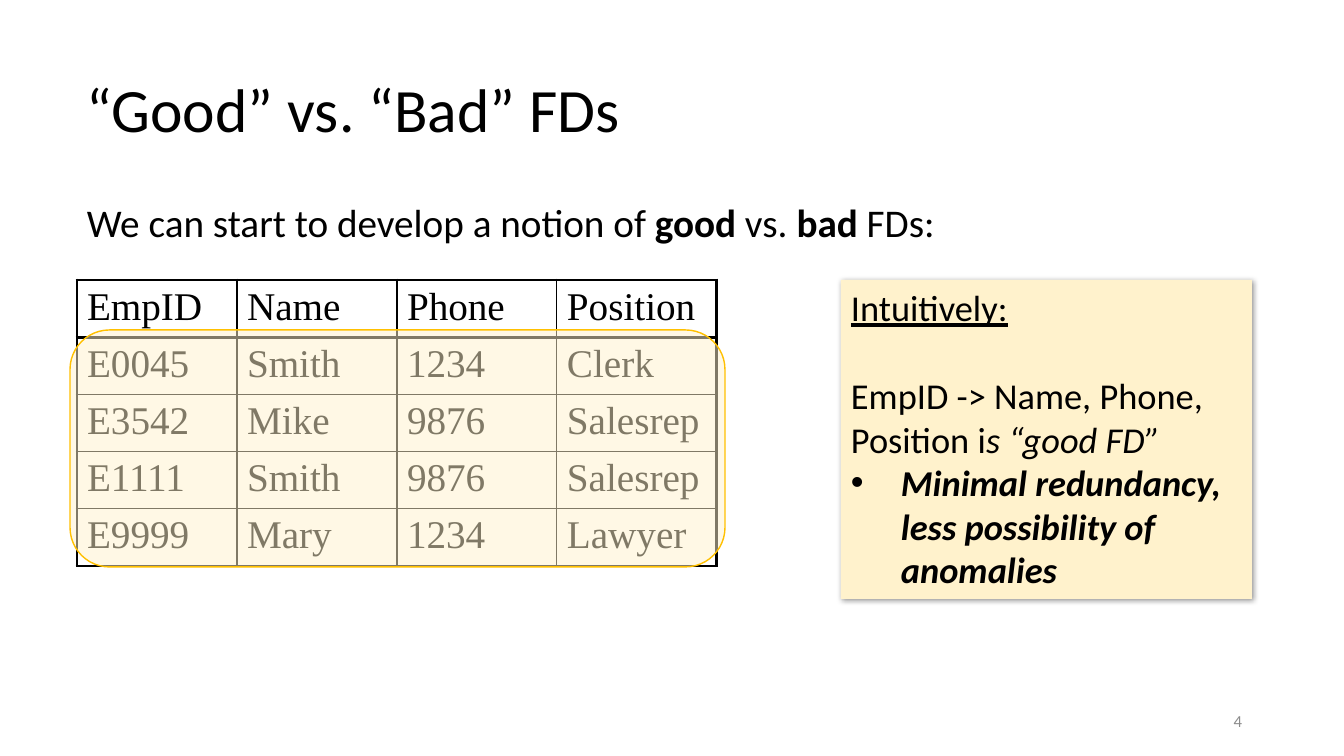
from lxml import etree
from pptx import Presentation
from pptx.dml.color import RGBColor
from pptx.enum.shapes import MSO_SHAPE
from pptx.enum.text import MSO_ANCHOR, PP_ALIGN
from pptx.oxml.ns import qn
from pptx.util import Emu, Pt

EMU_PER_PX = 914400 / 100.8
RECTANGLE, ROUNDED = MSO_SHAPE.RECTANGLE, MSO_SHAPE.ROUNDED_RECTANGLE
TOP, MIDDLE = MSO_ANCHOR.TOP, MSO_ANCHOR.MIDDLE
LEFT, RIGHT = PP_ALIGN.LEFT, PP_ALIGN.RIGHT
SANS, SERIF = "Calibri", "Times New Roman"
BLACK, GREY, CREAM, AMBER = "000000", "8C8C8C", "FFF2CC", "FFC000"
THIN, THICK = 1, 2.25

EMPLOYEES = [
    ["EmpID", "Name", "Phone", "Position"],
    ["E0045", "Smith", "1234", "Clerk"],
    ["E3542", "Mike", "9876", "Salesrep"],
    ["E1111", "Smith", "9876", "Salesrep"],
    ["E9999", "Mary", "1234", "Lawyer"],
]


def px(*lengths):
    return [Emu(round(length * EMU_PER_PX)) for length in lengths]


def colour(hex_code):
    return RGBColor.from_string(hex_code)


def add_node(parent, tag, **attributes):
    node = etree.SubElement(parent, qn(tag))
    for name, value in attributes.items():
        node.set(name, str(value))
    return node


def write(para, text, size, font=SANS, ink=BLACK, bold=False, italic=False,
          underline=False):
    span = para.add_run()
    span.text = text
    span.font.size = Pt(size)
    span.font.name = font
    span.font.color.rgb = colour(ink)
    span.font.bold = bold
    span.font.italic = italic
    span.font.underline = underline


def add_text(page, place, spans, size, ink=BLACK, anchor=TOP, align=LEFT,
             line_spacing=1.0, wrap=True):
    """Add a one-paragraph text box; spans are (text, bold) pairs."""
    frame = page.shapes.add_textbox(*px(*place)).text_frame
    frame.word_wrap = wrap
    frame.vertical_anchor = anchor
    para = frame.paragraphs[0]
    para.alignment = align
    para.line_spacing = line_spacing
    for text, bold in spans:
        write(para, text, size, ink=ink, bold=bold)


def add_panel(page, kind, place, fill, line=None):
    panel = page.shapes.add_shape(kind, *px(*place))
    panel.shadow.inherit = False
    panel.fill.solid()
    panel.fill.fore_color.rgb = colour(fill)
    if line:
        panel.line.color.rgb = colour(line)
        panel.line.width = Pt(THIN)
    else:
        panel.line.fill.background()
    return panel


def add_shadow(panel):
    effects = panel._element.spPr.find(qn("a:effectLst"))
    shadow = add_node(effects, "a:outerShdw", blurRad=Pt(4), dist=Pt(1),
                      dir=45 * 60000, algn="tl", rotWithShape=0)
    ink = add_node(shadow, "a:srgbClr", val=BLACK)
    add_node(ink, "a:alpha", val=40000)


def set_transparency(panel, percent):
    ink = panel._element.spPr.find(qn("a:solidFill"))[0]
    add_node(ink, "a:alpha", val=(100 - percent) * 1000)


def set_bullet(para, indent):
    properties = para._p.get_or_add_pPr()
    properties.set("marL", str(indent))
    properties.set("indent", str(-indent))
    add_node(properties, "a:buFont", typeface="Arial")
    add_node(properties, "a:buChar", char="•")


def set_borders(cell, thick_sides):
    properties = cell._tc.get_or_add_tcPr()
    for side in "LRTB":
        width = THICK if side in thick_sides else THIN
        border = add_node(properties, f"a:ln{side}", w=Pt(width))
        fill = add_node(border, "a:solidFill")
        add_node(fill, "a:srgbClr", val=BLACK)


def thick_sides(row, column, last_row, last_column):
    """Name the sides on the outer frame or on the header's lower rule."""
    sides = {"L": column == 0, "R": column == last_column,
             "T": row in (0, 1), "B": row in (0, last_row)}
    return [side for side, thick in sides.items() if thick]


def add_employee_table(page, left, top, column_width, row_height):
    rows, columns = len(EMPLOYEES), len(EMPLOYEES[0])
    table = page.shapes.add_table(
        rows, columns,
        *px(left, top, columns * column_width, rows * row_height)).table
    table.first_row = table.horz_banding = False
    for row, values in enumerate(EMPLOYEES):
        for column, value in enumerate(values):
            cell = table.cell(row, column)
            set_borders(cell, thick_sides(row, column, rows - 1, columns - 1))
            cell.fill.background()
            para = cell.text_frame.paragraphs[0]
            para.space_before = Pt(1.4)
            write(para, value, 28, font=SERIF)


def add_intuition(page):
    box = add_panel(page, RECTANGLE, (841, 280, 411, 319), CREAM)
    add_shadow(box)
    frame = box.text_frame
    frame.word_wrap = True
    frame.vertical_anchor = TOP
    heading, rule, benefit = (frame.paragraphs[0], frame.add_paragraph(),
                              frame.add_paragraph())
    for para in frame.paragraphs:
        para.alignment = LEFT
    write(heading, "Intuitively:", 26, underline=True)
    rule.space_before = Pt(31.7)
    write(rule, "EmpID -> Name, Phone, Position i", 26)
    write(rule, "s “good FD”", 26, italic=True)
    set_bullet(benefit, px(50)[0])
    write(benefit, "Minimal redundancy, less possibility of anomalies", 26,
          bold=True, italic=True)


def main():
    deck = Presentation()
    deck.slide_width, deck.slide_height = px(1344, 756)
    page = deck.slides.add_slide(deck.slide_layouts[6])

    add_text(page, (950, 701, 302, 40), [("4", False)], 12, ink=GREY,
             anchor=MIDDLE, align=RIGHT)
    add_text(page, (77, 40, 1174, 146), [("“Good” vs. “Bad” FDs", False)], 44,
             anchor=MIDDLE, line_spacing=0.9)
    add_text(page, (77, 193, 878, 57),
             [("We can start to develop a notion of ", False), ("good ", True),
              ("vs. ", False), ("bad", True), (" FDs:", False)], 28, wrap=False)
    add_employee_table(page, 77, 280, 160, 57)
    add_intuition(page)
    highlight = add_panel(page, ROUNDED, (70, 330, 655, 237), CREAM, AMBER)
    set_transparency(highlight, 50)
    deck.save("out.pptx")


if __name__ == "__main__":
    main()
